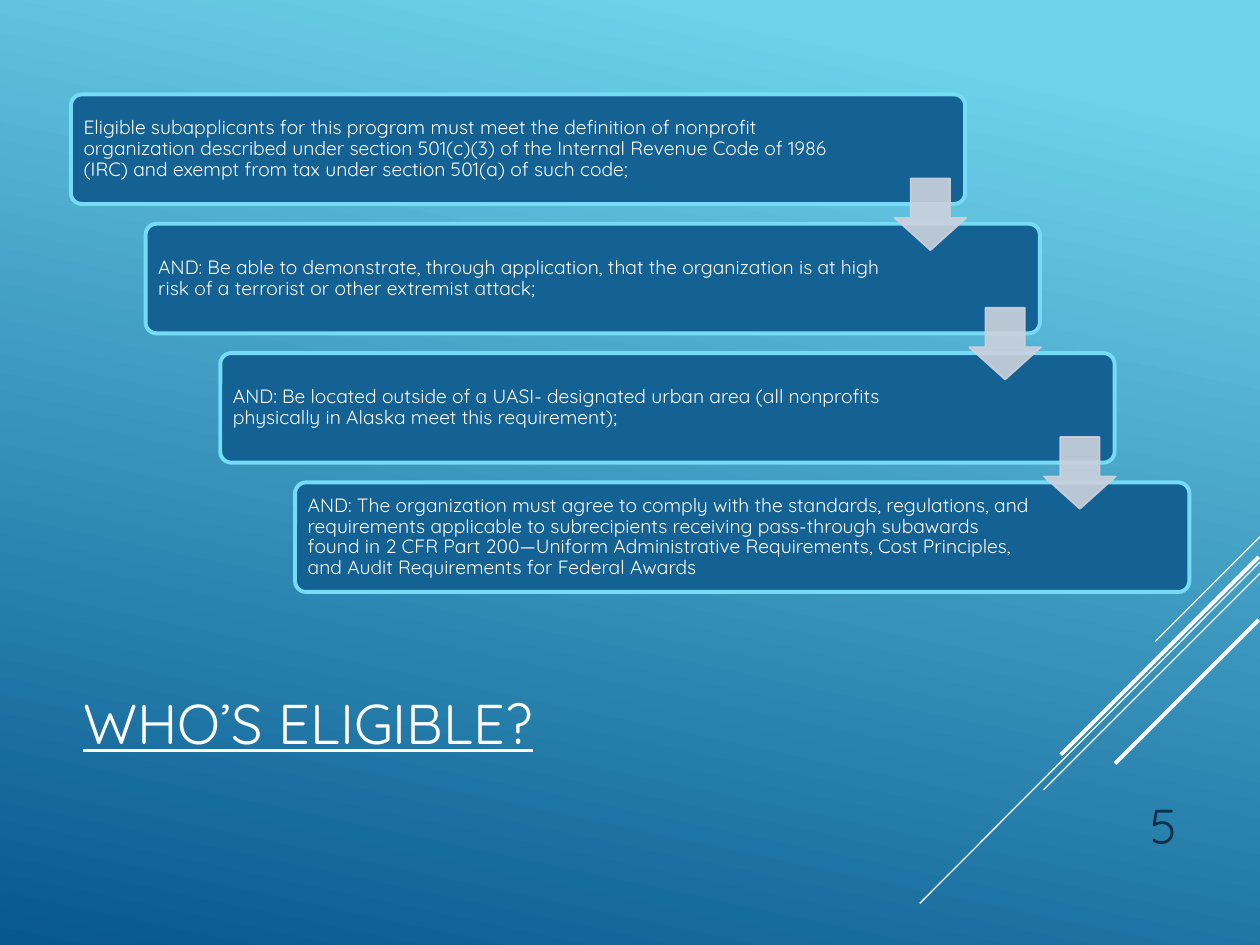
"""Build the eligibility slide: four stepped boxes joined by arrows."""
from dataclasses import dataclass

from lxml.etree import SubElement
from pptx import Presentation
from pptx.dml.color import RGBColor
from pptx.enum.shapes import MSO_CONNECTOR, MSO_SHAPE
from pptx.enum.text import MSO_ANCHOR, PP_ALIGN
from pptx.oxml.ns import qn
from pptx.util import Pt

TITLE = "WHO’S ELIGIBLE?"
NUMBER = "5"
STEPS = [
    "Eligible subapplicants for this program must meet the definition of nonprofit "
    "organization described under section 501(c)(3) of the Internal Revenue Code of 1986 "
    "(IRC) and exempt from tax under section 501(a) of such code;",
    "AND: Be able to demonstrate, through application, that the organization is at high "
    "risk of a terrorist or other extremist attack;",
    "AND: Be located outside of a UASI- designated urban area (all nonprofits physically "
    "in Alaska meet this requirement);",
    "AND: The organization must agree to comply with the standards, regulations, and "
    "requirements applicable to subrecipients receiving pass-through subawards found in "
    "2 CFR Part 200—Uniform Administrative Requirements, Cost Principles, and Audit "
    "Requirements for Federal Awards",
]
RAYS = [
    (720, 306.7, 660.2, 366.5, 0.75),
    (720, 321.1, 525.6, 516.2, 0.75),
    (720, 327.6, 596.2, 451.4, 0.75),
    (719.3, 318.2, 606.2, 431.3, 2.25),
    (719.3, 354.2, 637.2, 436.3, 2.25),
]
LEFT, TOP, WIDE, HIGH = 40.5, 54, 511, 62.6
SHIFT, DROP = 42.7, 73.9
ARROW = 41


@dataclass(frozen=True)
class Theme:
    font: str = "Quicksand"
    white: str = "FFFFFF"
    dark: str = "0A304A"
    box: str = "146194"
    edge: str = "76DBF4"
    arrow: str = "CCD2DC"
    light: str = "6ED2EB"
    deep: str = "06588E"
    title: int = 32
    number: int = 28
    body: int = 11


THEME = Theme()


def color(code):
    return RGBColor.from_string(code)


def write(shape, text, size, ink=THEME.white, align=PP_ALIGN.LEFT, anchor=MSO_ANCHOR.MIDDLE,
          inset=(7.2, 3.6, 7.2, 3.6), line=1.0, after=0, under=None):
    frame = shape.text_frame
    frame.word_wrap = True
    frame.vertical_anchor = anchor
    (frame.margin_left, frame.margin_top,
     frame.margin_right, frame.margin_bottom) = map(Pt, inset)
    para = frame.paragraphs[0]
    para.alignment, para.line_spacing = align, line
    para.space_before, para.space_after = Pt(0), Pt(after)
    run = para.add_run()
    run.text = text
    font = run.font
    font.name, font.size, font.underline = THEME.font, Pt(size), under
    font.color.rgb = color(ink)


def draw(slide, kind, place, fill, edge, width, adjust):
    shape = slide.shapes.add_shape(kind, *map(Pt, place))
    shape.shadow.inherit = False
    shape.fill.solid()
    shape.fill.fore_color.rgb = color(fill)
    shape.line.color.rgb = color(edge)
    shape.line.width = Pt(width)
    for i, value in enumerate(adjust):
        shape.adjustments[i] = value
    return shape


def fade(shape, share):
    for tint in shape._element.spPr.iter(qn("a:srgbClr")):
        SubElement(tint, qn("a:alpha")).set("val", str(share * 1000))


def paint(slide):
    fill = slide.background.fill
    fill.gradient()
    fill.gradient_angle = 258
    for stop, code, spot in zip(fill.gradient_stops, (THEME.light, THEME.deep), (0.1, 1)):
        stop.color.rgb = color(code)
        stop.position = spot


def main():
    deck = Presentation()
    deck.slide_width, deck.slide_height = Pt(720), Pt(540)
    slide = deck.slides.add_slide(deck.slide_layouts[5])
    paint(slide)

    for *ends, width in RAYS:
        ray = slide.shapes.add_connector(MSO_CONNECTOR.STRAIGHT, *map(Pt, ends))
        ray.line.color.rgb = color(THEME.white)
        ray.line.width = Pt(width)
        SubElement(ray._element.spPr, qn("a:effectLst"))

    title = slide.shapes.title
    title.left, title.top, title.width, title.height = map(Pt, (LEFT, 353.5, 504, 118.8))
    write(title, TITLE, THEME.title, under=True)

    number = slide.shapes.add_textbox(*map(Pt, (612, 439.2, 67.7, 52.6)))
    write(number, NUMBER, THEME.number, ink=THEME.dark, align=PP_ALIGN.RIGHT,
          anchor=MSO_ANCHOR.BOTTOM, after=6)

    spots = [(LEFT + i * SHIFT, TOP + i * DROP) for i in range(len(STEPS))]
    for i, (text, (x, y)) in enumerate(zip(STEPS, spots)):
        box = draw(slide, MSO_SHAPE.ROUNDED_RECTANGLE, (x, y, WIDE, HIGH),
                   THEME.box, THEME.edge, 2.25, [0.1])
        write(box, text, THEME.body, inset=(5.4, 3.6, 88 if i else 74, 3.6), line=0.9)

    for x, y in spots[:-1]:
        arrow = draw(slide, MSO_SHAPE.DOWN_ARROW, (x + WIDE - ARROW + 0.7, y + 48, ARROW, ARROW),
                     THEME.arrow, THEME.arrow, 1, [0.55, 0.45])
        fade(arrow, 90)

    deck.save("out.pptx")


if __name__ == "__main__":
    main()
